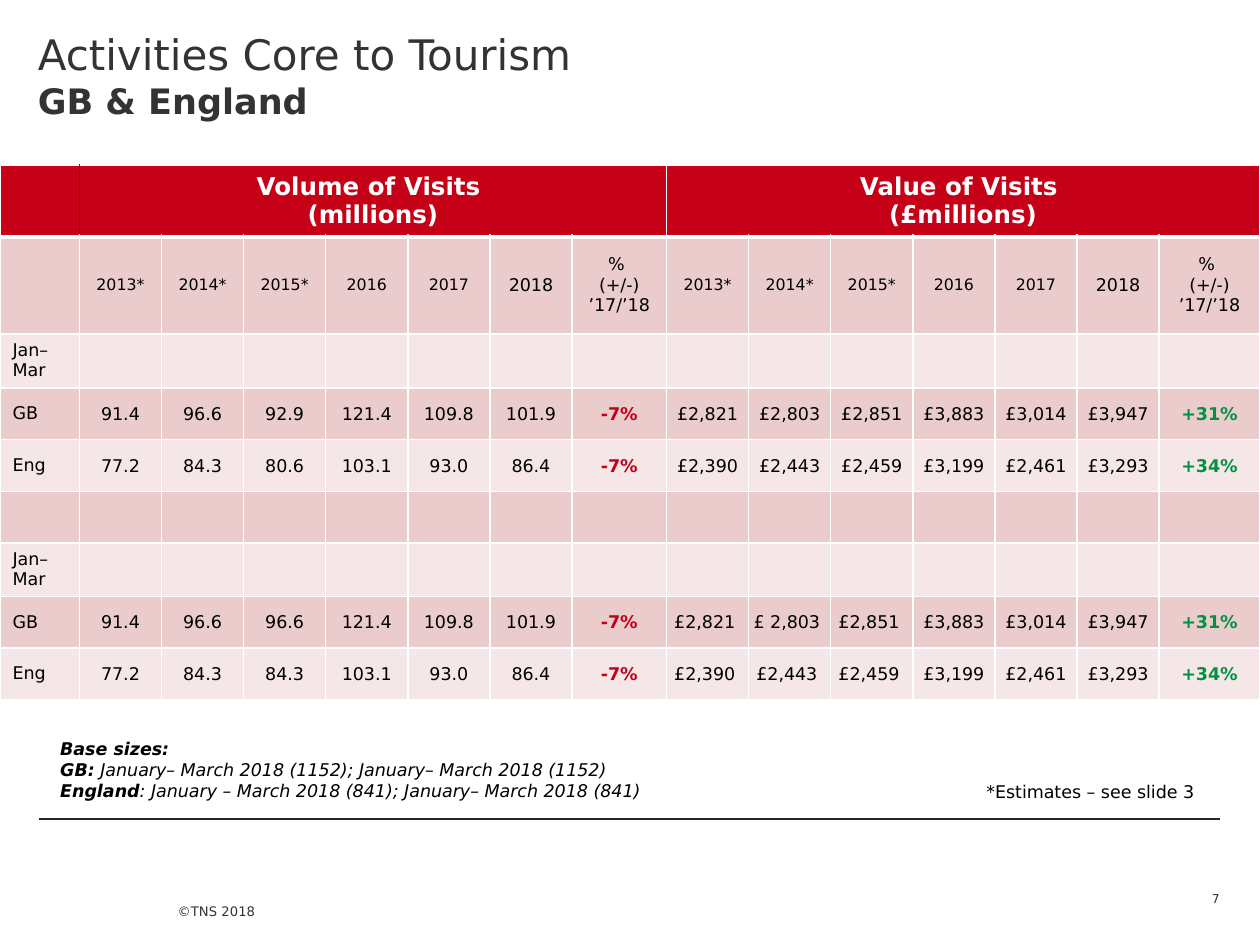
from dataclasses import dataclass
from typing import NamedTuple

from lxml import etree
from pptx import Presentation
from pptx import util as u
from pptx.dml.color import RGBColor
from pptx.enum import shapes, text
from pptx.oxml import ns


@dataclass(frozen=True)
class Theme:
    font: str = "DejaVu Sans"
    red: str = "C50017"
    dark_red: str = "940011"
    green: str = "009242"
    band_dark: str = "EACCCC"
    band_light: str = "F5E7E8"
    white: str = "FFFFFF"
    black: str = "000000"
    grey: str = "333333"
    rule: str = "262626"
    title: float = 24
    subtitle: float = 20
    heading: float = 14
    body: float = 10
    year: float = 9
    footer: float = 7.5
    number: float = 7


THEME = Theme()
COLUMNS, ROWS = 100, 75  # slide grid, one step is a tenth of an inch


class Run(NamedTuple):
    words: str
    size: float = THEME.body
    color: str = THEME.black
    bold: bool = False
    italic: bool = False


class Insets(NamedTuple):
    left: float = 1
    top: float = 0.5
    right: float = 1
    bottom: float = 0.5


class Box(NamedTuple):
    left: float
    top: float
    width: float
    height: float
    paragraphs: list
    insets: Insets = Insets()
    anchor: text.MSO_ANCHOR = text.MSO_ANCHOR.TOP
    align: text.PP_ALIGN = text.PP_ALIGN.LEFT
    wrap: bool = True


TIGHT = Insets(0.1, 0.1, 0.1, 0)
MIDDLE, CENTER = text.MSO_ANCHOR.MIDDLE, text.PP_ALIGN.CENTER


def grid(steps: float) -> int:
    return u.Inches(steps / 10)


def set_values(target, values: dict) -> None:
    for name, value in values.items():
        setattr(target, name, value)


def margins(insets: Insets) -> dict:
    return {f"margin_{side}": grid(value) for side, value in insets._asdict().items()}


def write(frame, paragraphs: list, align: text.PP_ALIGN) -> None:
    """Write lists of runs; a newline inside a run is a line break."""
    for index, runs in enumerate(paragraphs):
        paragraph = frame.add_paragraph() if index else frame.paragraphs[0]
        paragraph.alignment = align
        for run in runs:
            for part, words in enumerate(run.words.split("\n")):
                if part:
                    paragraph.add_line_break()
                if not words:
                    continue
                piece = paragraph.add_run()
                piece.text = words
                set_values(piece.font, {"name": THEME.font, "size": u.Pt(run.size),
                                        "bold": run.bold, "italic": run.italic})
                piece.font.color.rgb = RGBColor.from_string(run.color)


def add_box(slide, box: Box) -> None:
    shape = slide.shapes.add_textbox(*map(grid, box[:4]))
    set_values(shape.text_frame, {"word_wrap": box.wrap, "vertical_anchor": box.anchor,
                                  **margins(box.insets)})
    write(shape.text_frame, box.paragraphs, box.align)


def add_borders(cell, **changes: tuple) -> None:
    """Draw white hairlines, with (color, points) changes for single sides."""
    properties = cell._tc.get_or_add_tcPr()
    for side in "LRTB":
        color, points = changes.get(side, (THEME.white, 1))
        line = etree.SubElement(properties, ns.qn(f"a:ln{side}"), w=str(u.Pt(points)))
        fill = etree.SubElement(line, ns.qn("a:solidFill"))
        etree.SubElement(fill, ns.qn("a:srgbClr"), val=color)


def style_cell(cell, fill: str, paragraphs: list, insets: Insets, align=CENTER,
               anchor=MIDDLE, **borders: tuple) -> None:
    add_borders(cell, **borders)
    cell.fill.solid()
    cell.fill.fore_color.rgb = RGBColor.from_string(fill)
    set_values(cell, {"vertical_anchor": anchor, **margins(insets)})
    write(cell.text_frame, paragraphs, align)


def value_run(words: str) -> Run:
    if words.endswith("%"):
        return Run(words, color=THEME.red if words[0] == "-" else THEME.green, bold=True)
    return Run(words)


# Table content
BLOCK = 7  # six years and the change
LABEL_WIDTH, CHANGE_WIDTHS = 6.3, (7.5, 8)
YEAR_WIDTH = (COLUMNS - LABEL_WIDTH - sum(CHANGE_WIDTHS)) / 12
ROW_HEIGHTS = [5.7, 7.7, 4.3] + [4.1] * 6
HEADINGS = [("Volume of Visits ", "(millions)"), ("Value of Visits ", "(£millions)")]
YEARS = ["2013*", "2014*", "2015*", "2016", "2017"]
DATA = [
    ["Jan– Mar"],
    ["GB", "91.4", "96.6", "92.9", "121.4", "109.8", "101.9", "-7%",
     "£2,821", "£2,803", "£2,851", "£3,883", "£3,014", "£3,947", "+31%"],
    ["Eng", "77.2", "84.3", "80.6", "103.1", "93.0", "86.4", "-7%",
     "£2,390", "£2,443", "£2,459", "£3,199", "£2,461", "£3,293", "+34%"],
    [],
    ["Jan– Mar"],
    ["GB", "91.4", "96.6", "96.6", "121.4", "109.8", "101.9", "-7%",
     "£2,821 ", "£ 2,803 ", "£2,851 ", "£3,883", "£3,014", "£3,947", "+31%"],
    ["Eng", "77.2", "84.3", "84.3", "103.1", "93.0", "86.4", "-7%",
     "£2,390 ", "£2,443 ", "£2,459 ", "£3,199", "£2,461", "£3,293", "+34%"],
]


def add_visits_table(slide) -> None:
    widths = [LABEL_WIDTH] + [w for change in CHANGE_WIDTHS for w in [YEAR_WIDTH] * 6 + [change]]
    table = slide.shapes.add_table(len(ROW_HEIGHTS), len(widths), 0, grid(13.1),
                                   grid(COLUMNS), grid(sum(ROW_HEIGHTS))).table
    set_values(table, {"first_row": False, "horz_banding": False})
    for column, width in zip(table.columns, widths):
        column.width = grid(width)
    for row, height in zip(table.rows, ROW_HEIGHTS):
        row.height = grid(height)

    # Red heading row, with one merged cell per block
    under, divider = (THEME.white, 3), (THEME.dark_red, 1)
    starts = {1 + BLOCK * index: lines for index, lines in enumerate(HEADINGS)}
    for index in range(len(widths)):
        lines = [[Run(line, THEME.heading, THEME.white, True)] for line in starts.get(index, ())]
        sides = {0: {"R": divider}, 1: {"L": divider}}.get(index, {})
        style_cell(table.cell(0, index), THEME.red, lines, Insets(), B=under, **sides)
    for start in starts:
        table.cell(0, start).merge(table.cell(0, start + BLOCK - 1))

    # Year row
    block = [[[Run(year, THEME.year)]] for year in YEARS]
    block += [[[Run("2018")]], [[Run("% ")], [Run("(+/-) ’17/’18")]]]
    for index, paragraphs in enumerate([[]] + block * 2):
        style_cell(table.cell(1, index), THEME.band_dark, paragraphs, Insets(), T=under if not index else (THEME.white, 3))

    # Banded data rows
    for number, values in enumerate(DATA, start=2):
        fill = THEME.band_dark if number % 2 else THEME.band_light
        for index in range(len(widths)):
            paragraphs = [[value_run(values[index])]] if index < len(values) else []
            cell = table.cell(number, index)
            if index == 0:
                anchor = text.MSO_ANCHOR.TOP if number == 2 else MIDDLE
                style_cell(cell, fill, paragraphs, Insets(), text.PP_ALIGN.LEFT, anchor)
            else:
                style_cell(cell, fill, paragraphs, TIGHT)


def add_footer_rule(slide) -> None:
    line = slide.shapes.add_connector(shapes.MSO_CONNECTOR.STRAIGHT,
                                      *map(grid, (3.1, 65, 96.8, 65)))
    line.line.color.rgb = RGBColor.from_string(THEME.rule)
    line.line.width = u.Pt(0.75)
    etree.SubElement(line._element.spPr, ns.qn("a:effectLst"))


BOTTOM = text.MSO_ANCHOR.BOTTOM
COPYRIGHT = Box(14.1, 69.2, 8.2, 5.8, [[Run("©TNS 2018", THEME.footer, THEME.grey)]],
                Insets(0, 0, 0, 2.9), BOTTOM)
TITLE = Box(0, 0, 55.5, 14, [[Run("Activities Core to Tourism\n", THEME.title, THEME.grey),
                              Run("GB & England", THEME.subtitle, THEME.grey, True)]],
            Insets(3, 2.3, 3, 0))
BASE_SIZES = Box(3.8, 58.1, 84.4, 6.1, [
    [Run("Base sizes: \nGB:", bold=True, italic=True),
     Run(" January– March 2018 (1152); January– March 2018 (1152)", italic=True)],
    [Run("England", bold=True, italic=True),
     Run(": January – March 2018 (841); January– March 2018 (841)", italic=True)]])
PAGE_NUMBER = Box(91.3, 69.2, 5.5, 2.7, [[Run("7", THEME.number, THEME.grey)]],
                  Insets(0, 0, 0, 0), BOTTOM, text.PP_ALIGN.RIGHT)
ESTIMATES = Box(77.3, 61.5, 19.2, 2.7, [[Run("*Estimates – see slide 3")]], wrap=False)


def main() -> None:
    presentation = Presentation()
    set_values(presentation, {"slide_width": grid(COLUMNS), "slide_height": grid(ROWS)})
    slide = presentation.slides.add_slide(presentation.slide_layouts[6])
    add_footer_rule(slide)
    add_visits_table(slide)
    for box in (COPYRIGHT, TITLE, BASE_SIZES, PAGE_NUMBER, ESTIMATES):
        add_box(slide, box)
    presentation.save("out.pptx")


if __name__ == "__main__":
    main()
